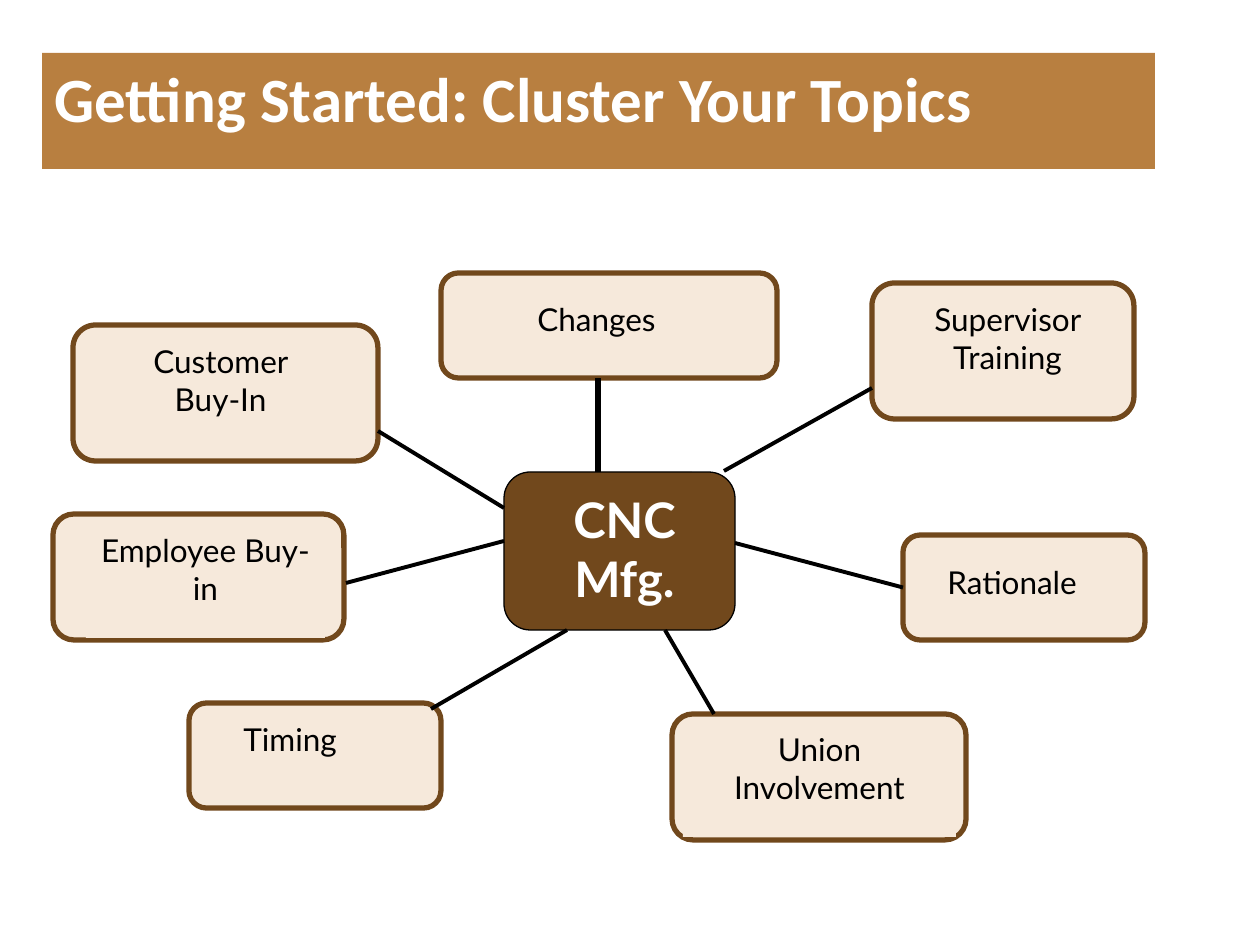
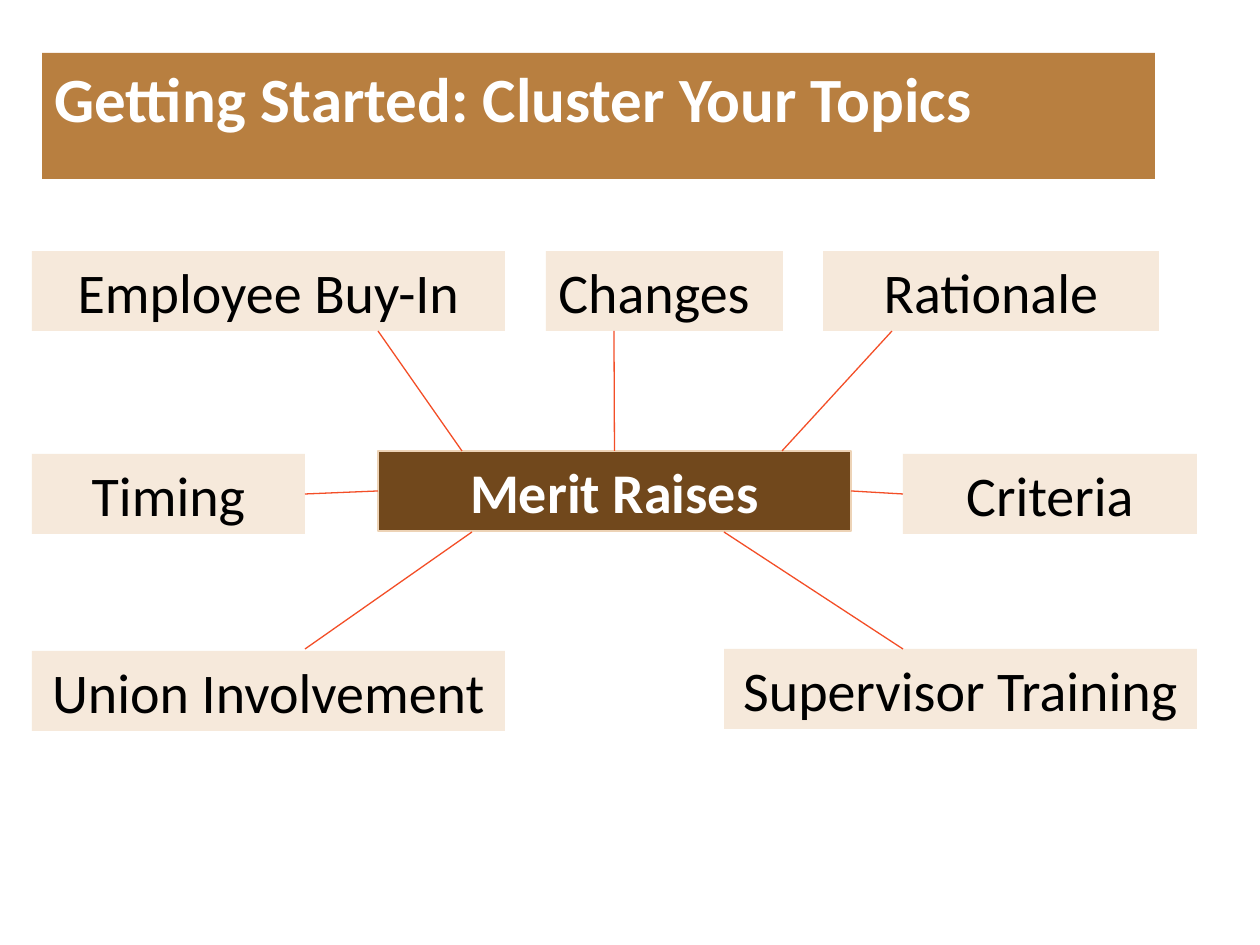
from dataclasses import dataclass

from lxml.etree import SubElement
from pptx import Presentation
from pptx.dml.color import RGBColor
from pptx.enum.shapes import MSO_CONNECTOR, MSO_SHAPE
from pptx.enum.text import MSO_ANCHOR, MSO_AUTO_SIZE, PP_ALIGN
from pptx.oxml.ns import qn
from pptx.util import Pt

EMU_PER_PX = 914400 / 126
TITLE = "Getting Started: Cluster Your Topics"


def px(length):
    """Turn a length in px into EMU."""
    return round(length * EMU_PER_PX)


@dataclass(frozen=True)
class Theme:
    """Colours, fonts and type sizes shared by the slides."""
    band: str = "B87F40"
    hub: str = "71481C"
    hub_edge: str = "EDD3B6"
    topic: str = "F6E9DB"
    ink: str = "000000"
    paper: str = "FFFFFF"
    accent: str = "F34E27"
    title_font: str = "Calibri"
    label_font: str = "Lato"
    title_size: int = 36
    box_size: int = 32
    hub_size: int = 28
    label_size: int = 18


class ClusterDeck:
    """Draws topic clusters on the current slide in one style."""

    def __init__(self, theme):
        """Start an empty deck of 1260 by 945 px."""
        self.theme = theme
        self.deck = Presentation()
        self.deck.slide_width, self.deck.slide_height = px(1260), px(945)
        self.slide = None

    def start(self, title, band_height):
        """Add a slide with its title on a band."""
        self.slide = self.deck.slides.add_slide(self.deck.slide_layouts[5])
        band = self.slide.shapes.title
        band.left, band.top = px(42), px(53)
        band.width, band.height = px(1113), px(band_height)
        band.fill.solid()
        band.fill.fore_color.rgb = RGBColor.from_string(self.theme.band)
        self.set_text(band, title, self.theme.title_font,
                      self.theme.title_size, self.theme.paper, bold=True,
                      align=PP_ALIGN.LEFT)

    def set_text(self, shape, text, font, size, colour, bold=False,
                 align=PP_ALIGN.CENTER):
        """Set the single paragraph of a shape."""
        frame = shape.text_frame
        frame.text = text
        frame.word_wrap = True
        frame.auto_size = MSO_AUTO_SIZE.NONE
        frame.vertical_anchor = MSO_ANCHOR.TOP
        paragraph = frame.paragraphs[0]
        paragraph.alignment = align
        paragraph.space_before = Pt(0)
        paragraph.font.name = font
        paragraph.font.size = Pt(size)
        paragraph.font.bold = bold
        paragraph.font.color.rgb = RGBColor.from_string(colour)

    def box(self, bounds, fill, edge=None, weight=0.75,
            preset=MSO_SHAPE.RECTANGLE):
        """Add a filled shape with an optional outline."""
        shape = self.slide.shapes.add_shape(preset, *map(px, bounds))
        shape.shadow.inherit = False
        shape.fill.solid()
        shape.fill.fore_color.rgb = RGBColor.from_string(fill)
        if edge:
            shape.line.color.rgb = RGBColor.from_string(edge)
            shape.line.width = Pt(weight)
        else:
            shape.line.fill.background()
        return shape

    def rounded_topic(self, bounds, label_bounds, text, align):
        """Add a rounded topic with its label."""
        topic = self.box(bounds, self.theme.topic, self.theme.hub, 3,
                         MSO_SHAPE.ROUNDED_RECTANGLE)
        label = self.box(label_bounds, self.theme.topic)
        self.set_text(label, text, self.theme.label_font,
                      self.theme.label_size, self.theme.ink, align=align)
        return topic

    def rounded_hub(self, bounds, label_bounds, text):
        """Add the rounded centre of a cluster with its label."""
        hub = self.box(bounds, self.theme.hub, self.theme.ink,
                       preset=MSO_SHAPE.ROUNDED_RECTANGLE)
        label = self.box(label_bounds, self.theme.hub)
        self.set_text(label, text, self.theme.label_font,
                      self.theme.hub_size, self.theme.paper, bold=True)
        return hub

    def flat_topic(self, bounds, text, align):
        """Add a plain topic box."""
        topic = self.box(bounds, self.theme.topic)
        self.set_text(topic, text, self.theme.title_font,
                      self.theme.box_size, self.theme.ink, align=align)
        return topic

    def flat_hub(self, bounds, text):
        """Add the plain centre of a cluster."""
        hub = self.box(bounds, self.theme.hub, self.theme.hub_edge)
        self.set_text(hub, text, self.theme.title_font,
                      self.theme.box_size, self.theme.paper, bold=True)
        return hub

    def spoke(self, topic, topic_end, hub, hub_end, colour, weight):
        """Link a topic to the hub, joined wherever an end is mid-side."""
        line = self.slide.shapes.add_connector(
            MSO_CONNECTOR.STRAIGHT, *map(px, topic_end + hub_end))
        line.line.color.rgb = RGBColor.from_string(colour)
        line.line.width = Pt(weight)
        SubElement(line._element.spPr, qn("a:effectLst"))
        for shape, end, connect in ((topic, topic_end, line.begin_connect),
                                    (hub, hub_end, line.end_connect)):
            site = self.mid_side(shape, end)
            if site is not None:
                connect(shape, site)

    @staticmethod
    def mid_side(shape, point):
        """Return the side whose middle lies within 2 px of a point."""
        middle = shape.left + shape.width / 2
        centre = shape.top + shape.height / 2
        sides = ((middle, shape.top), (shape.left, centre),
                 (middle, shape.top + shape.height),
                 (shape.left + shape.width, centre))
        for site, (x, y) in enumerate(sides):
            if max(abs(x - px(point[0])), abs(y - px(point[1]))) <= px(2):
                return site
        return None


def build_cnc_cluster(deck):
    """Build the cluster around CNC manufacturing."""
    left, center = PP_ALIGN.LEFT, PP_ALIGN.CENTER
    topics = (
        ("Timing", (189, 703, 252, 105), (231, 714, 168, 63), left,
         (431, 709), (567, 630), 2.25),
        ("Union Involvement", (672, 714, 294, 126), (683, 724, 273, 113),
         center, (714, 714), (665, 630), 2.25),
        ("Employee Buy-in", (53, 514, 291, 126), (86, 525, 239, 113), center,
         (346, 583), (504, 541), 2.25),
        ("Customer Buy-In", (73, 325, 305, 136), (105, 336, 231, 113), center,
         (378, 431), (504, 508), 2.25),
        ("Changes", (441, 273, 336, 105), (525, 294, 220, 63), left,
         (598, 378), (598, 472), 3),
        ("Supervisor Training", (872, 283, 262, 136), (892, 294, 231, 113),
         center, (872, 388), (724, 471), 2.25),
        ("Rationale", (903, 535, 242, 105), (935, 557, 199, 63), left,
         (903, 588), (735, 543), 2.25),
    )
    deck.start(TITLE, 116)
    hub = deck.rounded_hub((504, 472, 231, 158), (525, 483, 199, 130),
                           "CNC Mfg.")
    for text, bounds, label_bounds, align, outer, inner, weight in topics:
        topic = deck.rounded_topic(bounds, label_bounds, text, align)
        deck.spoke(topic, outer, hub, inner, deck.theme.ink, weight)


def build_merit_cluster(deck):
    """Build the cluster around merit raises."""
    left, center = PP_ALIGN.LEFT, PP_ALIGN.CENTER
    height = 80
    topics = (
        ("Changes", (546, 251, 237), left, (614, 331), (614, 451)),
        ("Criteria", (903, 454, 294), center, (903, 494), (850, 491)),
        ("Employee Buy-In", (32, 251, 473), center, (378, 331), (462, 451)),
        ("Timing", (32, 454, 273), center, (305, 494), (378, 491)),
        ("Union Involvement", (32, 651, 473), center, (305, 649), (472, 532)),
        ("Rationale", (823, 251, 336), center, (892, 331), (782, 451)),
        ("Supervisor Training", (724, 649, 473), center, (903, 649),
         (724, 532)),
    )
    deck.start(TITLE, 126)
    hub = deck.flat_hub((378, 451, 473, height), "Merit Raises")
    for text, place, align, outer, inner in topics:
        topic = deck.flat_topic((*place, height), text, align)
        deck.spoke(topic, outer, hub, inner, deck.theme.accent, 0.75)


def main():
    """Build both clusters and save the deck."""
    cluster_deck = ClusterDeck(Theme())
    build_cnc_cluster(cluster_deck)
    build_merit_cluster(cluster_deck)
    cluster_deck.deck.save("out.pptx")


if __name__ == "__main__":
    main()
